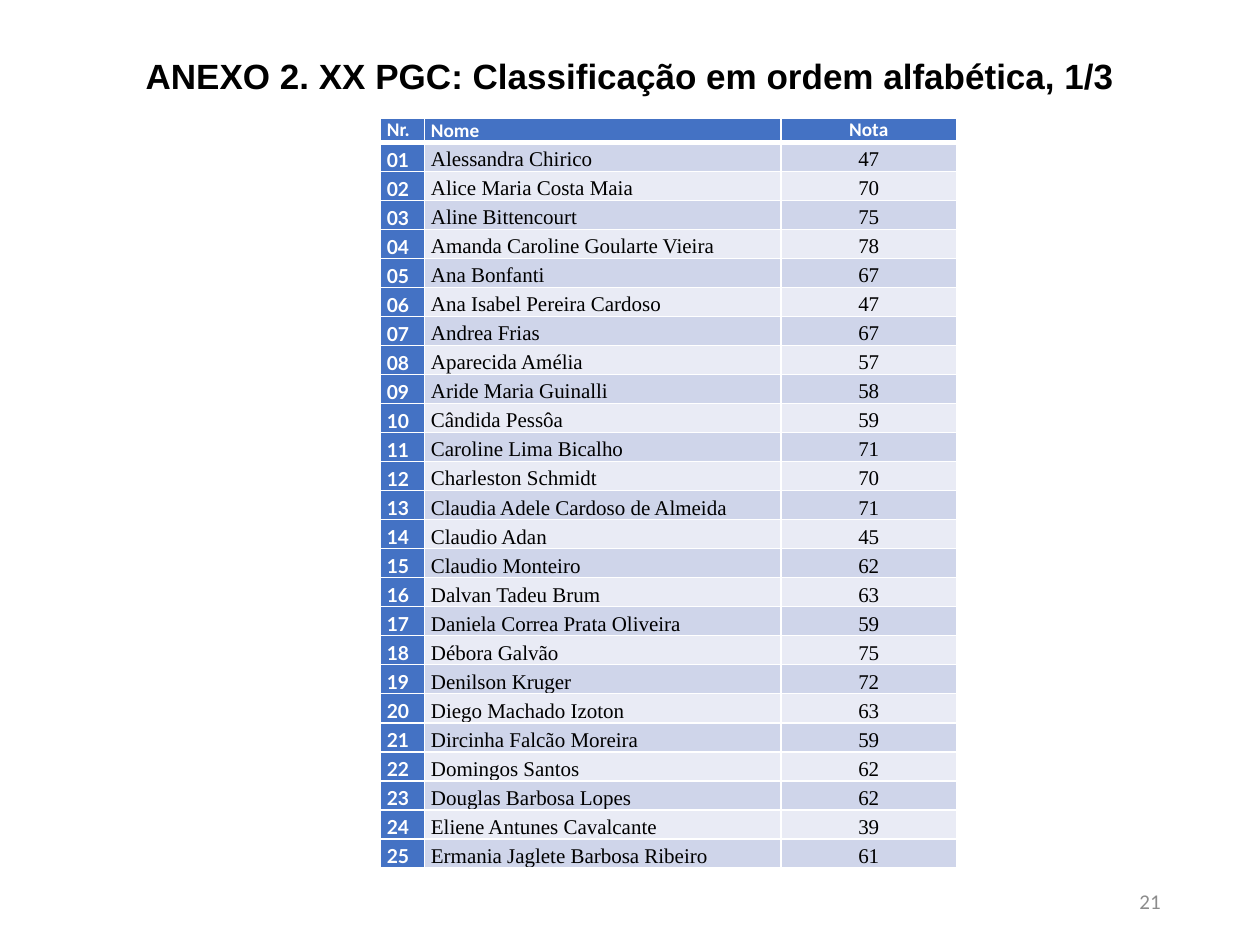
from lxml import etree
from pptx import Presentation
from pptx import util as u
from pptx.dml.color import RGBColor
from pptx.enum import text
from pptx.oxml.ns import qn

BLACK = RGBColor(0x00, 0x00, 0x00)
WHITE = RGBColor(0xFF, 0xFF, 0xFF)
GRAY = RGBColor(0x8C, 0x8C, 0x8C)
BLUE = RGBColor(0x44, 0x72, 0xC4)
BAND_DARK = RGBColor(0xCF, 0xD5, 0xEA)
BAND_LIGHT = RGBColor(0xE9, 0xEB, 0xF5)

LEFT, CENTER, RIGHT = text.PP_ALIGN.LEFT, text.PP_ALIGN.CENTER, text.PP_ALIGN.RIGHT
TOP, MIDDLE, BOTTOM = text.MSO_ANCHOR.TOP, text.MSO_ANCHOR.MIDDLE, text.MSO_ANCHOR.BOTTOM

COLUMN_WIDTHS = (0.35, 2.83, 1.39)
ROW_HEIGHT = 0.19
HEADERS = (("Nr.", LEFT, TOP), ("Nome", LEFT, BOTTOM), ("Nota", CENTER, TOP))
GRADES = (
    ("Alessandra Chirico", 47),
    ("Alice Maria Costa Maia", 70),
    ("Aline Bittencourt", 75),
    ("Amanda Caroline Goularte Vieira", 78),
    ("Ana Bonfanti", 67),
    ("Ana Isabel Pereira Cardoso", 47),
    ("Andrea Frias", 67),
    ("Aparecida Amélia", 57),
    ("Aride Maria Guinalli", 58),
    ("Cândida Pessôa", 59),
    ("Caroline Lima Bicalho", 71),
    ("Charleston Schmidt", 70),
    ("Claudia Adele Cardoso de Almeida", 71),
    ("Claudio Adan", 45),
    ("Claudio Monteiro", 62),
    ("Dalvan Tadeu Brum", 63),
    ("Daniela Correa Prata Oliveira", 59),
    ("Débora Galvão", 75),
    ("Denilson Kruger", 72),
    ("Diego Machado Izoton", 63),
    ("Dircinha Falcão Moreira", 59),
    ("Domingos Santos", 62),
    ("Douglas Barbosa Lopes", 62),
    ("Eliene Antunes Cavalcante", 39),
    ("Ermania Jaglete Barbosa Ribeiro", 61),
)


def write(para, words, font_name, size, color, bold=False, align=LEFT):
    para.text = words
    para.alignment = align
    para.font.name = font_name
    para.font.size = u.Pt(size)
    para.font.bold = bold
    para.font.color.rgb = color


def add_text(page, place, words, anchor, **style):
    box = page.shapes.add_textbox(*(u.Inches(length) for length in place))
    frame = box.text_frame
    frame.word_wrap = True
    frame.vertical_anchor = anchor
    write(frame.paragraphs[0], words, **style)
    return box


def set_borders(cell, top=1, bottom=1):
    properties = cell._tc.get_or_add_tcPr()
    widths = {"a:lnL": 1, "a:lnR": 1, "a:lnT": top, "a:lnB": bottom}
    for position, (tag, width) in enumerate(widths.items()):
        line = etree.Element(qn(tag), w=str(u.Pt(width)))
        fill = etree.SubElement(line, qn("a:solidFill"))
        etree.SubElement(fill, qn("a:srgbClr"), val=str(WHITE))
        properties.insert(position, line)


def fill_cell(cell, words, fill, anchor=BOTTOM, top=1, bottom=1, **style):
    cell.margin_left = cell.margin_right = u.Inches(0.05)
    cell.margin_top = cell.margin_bottom = 0
    cell.vertical_anchor = anchor
    cell.fill.solid()
    cell.fill.fore_color.rgb = fill
    set_borders(cell, top, bottom)
    para = cell.text_frame.paragraphs[0]
    write(para, words, **style)
    return para


def fill_grade_cell(cell, words, fill, top, align):
    para = fill_cell(cell, words, fill, top=top, align=align,
                     font_name="Times New Roman", size=12, color=BLACK)
    para.line_spacing = 1.15
    para.space_before = para.space_after = u.Pt(2)


def add_grades_table(page):
    row_count = len(GRADES) + 1
    table = page.shapes.add_table(
        row_count, len(COLUMN_WIDTHS), u.Inches(3.02), u.Inches(0.94),
        u.Inches(sum(COLUMN_WIDTHS)), u.Inches(ROW_HEIGHT * row_count)).table
    for column, width in zip(table.columns, COLUMN_WIDTHS):
        column.width = u.Inches(width)
    for row in table.rows:
        row.height = u.Inches(ROW_HEIGHT)

    for column, (words, align, anchor) in enumerate(HEADERS):
        fill_cell(table.cell(0, column), words, BLUE, anchor, bottom=3, align=align,
                  font_name="Calibri", size=11, color=WHITE, bold=True)
    for number, (name, grade) in enumerate(GRADES, start=1):
        band = BAND_DARK if number % 2 else BAND_LIGHT
        top = 3 if number == 1 else 1
        fill_cell(table.cell(number, 0), f"{number:02d}", BLUE, top=top,
                  font_name="Lato", size=11, color=WHITE, bold=True)
        fill_grade_cell(table.cell(number, 1), name, band, top, LEFT)
        fill_grade_cell(table.cell(number, 2), str(grade), band, top, CENTER)


def main():
    deck = Presentation()
    deck.slide_width, deck.slide_height = u.Inches(10), u.Inches(7.5)
    page = deck.slides.add_slide(deck.slide_layouts[6])
    add_text(page, (7.06, 6.95, 2.25, 0.4), "21", MIDDLE,
             font_name="Calibri", size=12, color=GRAY, align=RIGHT)
    title = add_text(page, (0, 0.38, 10, 0.44),
                     "ANEXO 2. XX PGC: Classificação em ordem alfabética, 1/3", TOP,
                     font_name="Arial", size=20, color=BLACK, bold=True, align=CENTER)
    title.text_frame.auto_size = text.MSO_AUTO_SIZE.SHAPE_TO_FIT_TEXT
    add_grades_table(page)
    deck.save("out.pptx")


if __name__ == "__main__":
    main()
